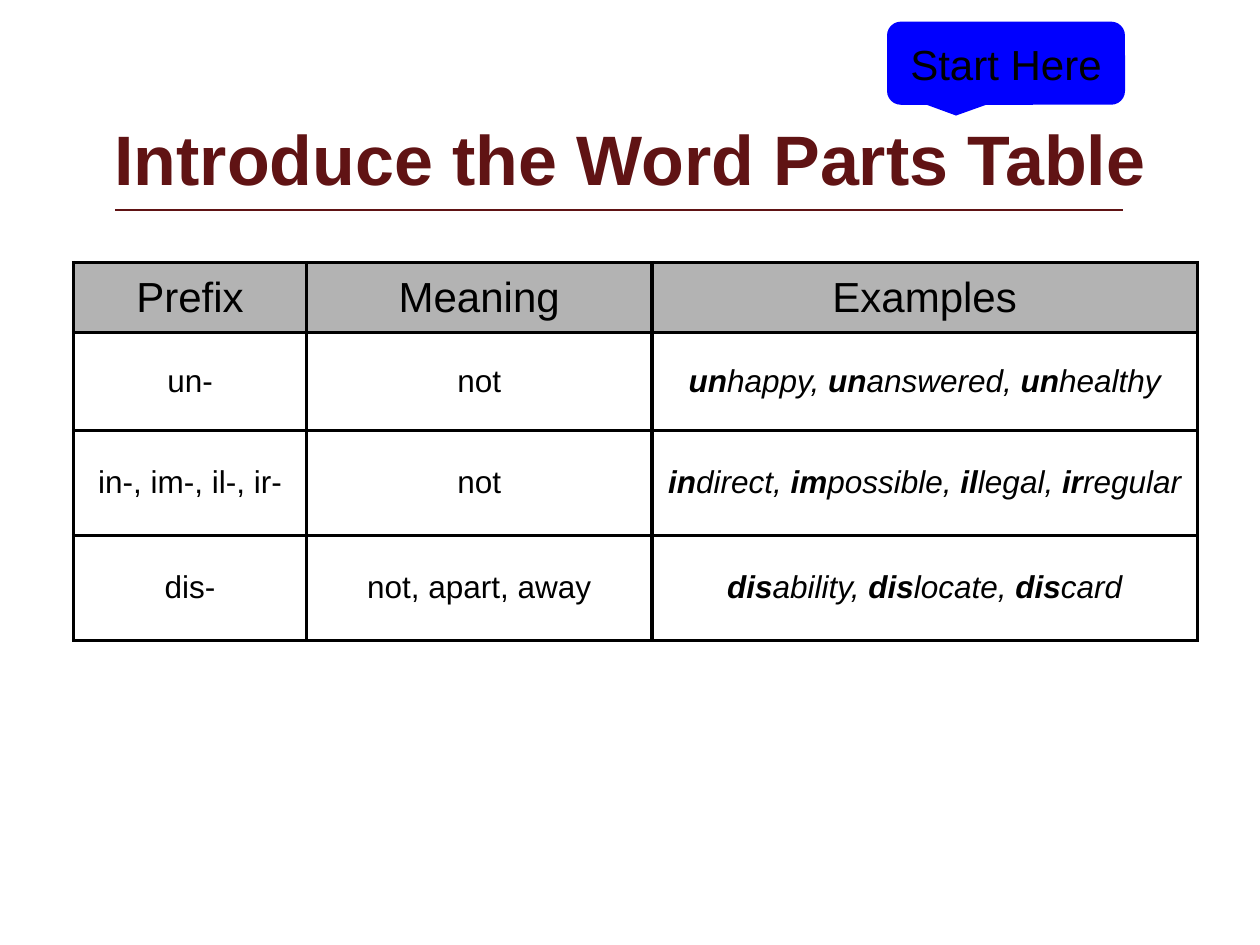
"""Build the slide that introduces the word parts table."""
import dataclasses

import lxml.etree
import pptx
import pptx.dml.color
import pptx.enum.shapes
import pptx.enum.text
import pptx.oxml
import pptx.oxml.ns
import pptx.util

Pt = pptx.util.Pt
MAROON, BLACK, GRAY, BLUE = "601314", "000000", "B3B3B3", "0000FF"
COLUMN_WIDTHS = (133.2, 197.3, 311.8)


@dataclasses.dataclass(frozen=True)
class TableRow:
    height: float
    texts: tuple[str, str, str]
    size: float = 18
    fill: str | None = None
    italic_examples: bool = True


ROWS = (
    TableRow(40, ("Prefix", "Meaning", "Examples"), 24, GRAY, False),
    TableRow(56, ("un-", "not", "*un*happy, *un*answered, *un*healthy")),
    TableRow(60, ("in-, im-, il-, ir-", "not",
                  "*in*direct,* im*possible,* il*legal, *ir*regular")),
    TableRow(60, ("dis-", "not, apart, away", "*dis*ability, *dis*locate, *dis*card")),
)


def rgb(value: str) -> pptx.dml.color.RGBColor:
    return pptx.dml.color.RGBColor.from_string(value)


def write_text(frame, text: str, *, size: float, color: str = BLACK,
               bold: bool = False, italic: bool = False) -> None:
    paragraph = frame.paragraphs[0]
    paragraph.alignment = pptx.enum.text.PP_ALIGN.CENTER
    for index, part in enumerate(text.split("*")):
        if part:
            run = paragraph.add_run()
            run.text = part
            run.font.name = "Arial"
            run.font.size = Pt(size)
            run.font.bold = bold or index % 2 == 1
            run.font.italic = italic
            run.font.color.rgb = rgb(color)


def add_borders(cell, color: str, width: float) -> None:
    properties = cell._tc.get_or_add_tcPr()
    for index, side in enumerate(("lnL", "lnR", "lnT", "lnB")):
        border = pptx.oxml.parse_xml(
            f'<a:{side} {pptx.oxml.ns.nsdecls("a")} w="{Pt(width)}">'
            f'<a:solidFill><a:srgbClr val="{color}"/></a:solidFill></a:{side}>')
        properties.insert(index, border)


def add_title(slide, text: str) -> None:
    box = slide.shapes.add_textbox(Pt(54), Pt(60), Pt(612), Pt(60))
    box.text_frame.word_wrap = True
    box.text_frame.vertical_anchor = pptx.enum.text.MSO_ANCHOR.MIDDLE
    write_text(box.text_frame, text, size=40, color=MAROON, bold=True)


def add_rule(slide) -> None:
    rule = slide.shapes.add_connector(
        pptx.enum.shapes.MSO_CONNECTOR.STRAIGHT, Pt(66), Pt(120), Pt(642), Pt(120))
    rule.line.color.rgb = rgb(MAROON)
    rule.line.width = Pt(1.5)
    lxml.etree.SubElement(rule._element.spPr, pptx.oxml.ns.qn("a:effectLst"))


def add_word_table(slide, rows: tuple[TableRow, ...]) -> None:
    table = slide.shapes.add_table(
        len(rows), len(COLUMN_WIDTHS), Pt(42), Pt(150),
        Pt(sum(COLUMN_WIDTHS)), Pt(sum(row.height for row in rows))).table
    table.horz_banding = False
    table.first_row = False
    for column, width in zip(table.columns, COLUMN_WIDTHS):
        column.width = Pt(width)
    for row_index, row in enumerate(rows):
        table.rows[row_index].height = Pt(row.height)
        for column_index, text in enumerate(row.texts):
            cell = table.cell(row_index, column_index)
            cell.vertical_anchor = pptx.enum.text.MSO_ANCHOR.MIDDLE
            if row.fill:
                cell.fill.solid()
                cell.fill.fore_color.rgb = rgb(row.fill)
            else:
                cell.fill.background()
            add_borders(cell, BLACK, 2.25)
            write_text(cell.text_frame, text, size=row.size,
                       italic=row.italic_examples and column_index == 2)


def add_callout(slide, text: str) -> None:
    shape = slide.shapes.add_shape(
        pptx.enum.shapes.MSO_SHAPE.ROUNDED_RECTANGULAR_CALLOUT,
        Pt(506.9), Pt(12.4), Pt(136), Pt(47.5))
    shape.adjustments[0] = -0.21
    shape.adjustments[1] = 0.63
    shape.shadow.inherit = False
    shape.fill.solid()
    shape.fill.fore_color.rgb = rgb(BLUE)
    shape.line.fill.background()
    shape.text_frame.word_wrap = False
    shape.text_frame.vertical_anchor = pptx.enum.text.MSO_ANCHOR.MIDDLE
    write_text(shape.text_frame, text, size=24)


def main() -> None:
    presentation = pptx.Presentation()
    presentation.slide_width, presentation.slide_height = Pt(720), Pt(540)
    slide = presentation.slides.add_slide(presentation.slide_layouts[6])
    add_rule(slide)
    add_title(slide, "Introduce the Word Parts Table")
    add_word_table(slide, ROWS)
    add_callout(slide, "Start Here")
    presentation.save("out.pptx")


if __name__ == "__main__":
    main()
